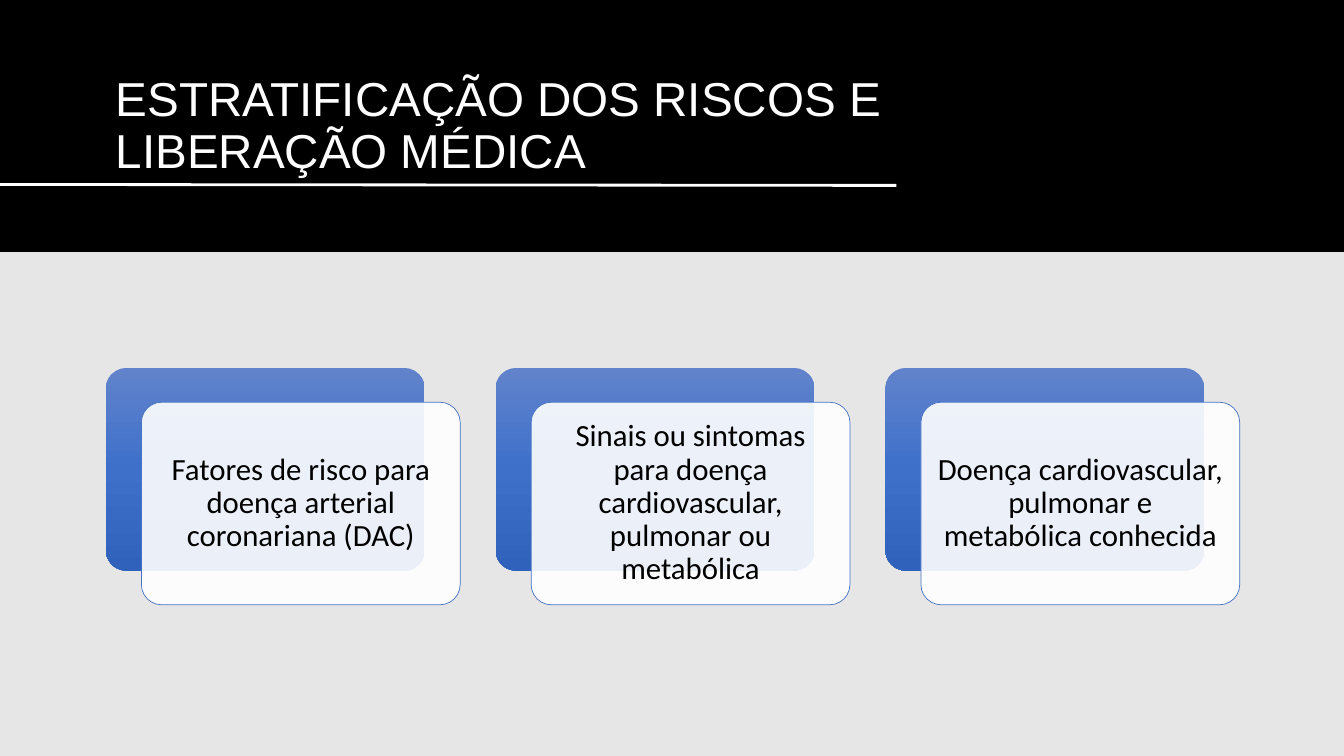
from dataclasses import dataclass

from lxml import etree
from pptx import Presentation
from pptx import util as u
from pptx.dml import color
from pptx.enum import shapes, text
from pptx.oxml import ns

SLIDE_WIDTH = u.Inches(13.33)
SLIDE_HEIGHT = u.Inches(7.5)
COLORS = {
    "background": "E7E6E6",
    "header": "000000",
    "white": "FFFFFF",
    "black": "000000",
    "outline": "4472C4",
    "gradient_top": "6183CB",
    "gradient_middle": "3E70CA",
    "gradient_bottom": "3062BB",
}
GRADIENT = [(0, "gradient_top"), (50, "gradient_middle"), (100, "gradient_bottom")]
CARD_OPACITY = 90
CARD_LEFT, CARD_TOP = 7.88, 48.67
CARD_PITCH = 29
CARD_WIDTH, CARD_HEIGHT = 23.72, 26.8
FRONT_SHIFT_X, FRONT_SHIFT_Y = 2.64, 4.53


@dataclass(frozen=True)
class Box:
    left: float
    top: float
    width: float
    height: float

    def shifted(self, across: float, down: float) -> "Box":
        return Box(self.left + across, self.top + down, self.width, self.height)

    def lengths(self) -> tuple:
        return across(self.left), down(self.top), across(self.width), down(self.height)


@dataclass(frozen=True)
class Card:
    column: int
    label: str

    def back_box(self) -> Box:
        left = CARD_LEFT + self.column * CARD_PITCH
        return Box(left, CARD_TOP, CARD_WIDTH, CARD_HEIGHT)


TITLE = "ESTRATIFICAÇÃO DOS RISCOS E LIBERAÇÃO MÉDICA"
CARDS = [
    Card(0, "Fatores de risco para doença arterial coronariana (DAC)"),
    Card(1, "Sinais ou sintomas para doença cardiovascular, pulmonar ou metabólica"),
    Card(2, "Doença cardiovascular, pulmonar e metabólica conhecida"),
]


def across(percent: float) -> int:
    return round(SLIDE_WIDTH * percent / 100)


def down(percent: float) -> int:
    return round(SLIDE_HEIGHT * percent / 100)


def rgb(name: str) -> color.RGBColor:
    return color.RGBColor.from_string(COLORS[name])


def add_block(parent, kind, box: Box):
    shape = parent.add_shape(kind, *box.lengths())
    shape.shadow.inherit = False
    shape.line.fill.background()
    return shape


def add_rounded(parent, box: Box):
    shape = add_block(parent, shapes.MSO_SHAPE.ROUNDED_RECTANGLE, box)
    shape.adjustments[0] = 0.1
    return shape


def write(shape, words: str, font: str, size: float, ink: str, anchor, alignment) -> None:
    frame = shape.text_frame
    frame.word_wrap = True
    frame.vertical_anchor = anchor
    frame.text = words
    paragraph = frame.paragraphs[0]
    paragraph.alignment = alignment
    paragraph.line_spacing = 0.9
    for run in paragraph.runs:
        run.font.name = font
        run.font.size = u.Pt(size)
        run.font.color.rgb = rgb(ink)


def fill_gradient(shape) -> None:
    shape.fill.gradient()
    shape.fill.gradient_angle = 270
    stops = shape.element.spPr.find(".//" + ns.qn("a:gsLst"))
    for stop in list(stops):
        stops.remove(stop)
    for position, name in GRADIENT:
        stop = etree.SubElement(stops, ns.qn("a:gs"), pos=str(position * 1000))
        etree.SubElement(stop, ns.qn("a:srgbClr"), val=COLORS[name])


def set_opacity(shape, percent: int) -> None:
    fill_color = shape.element.spPr.find(ns.qn("a:solidFill"))[0]
    etree.SubElement(fill_color, ns.qn("a:alpha"), val=str(percent * 1000))


def add_header(slide) -> None:
    band = add_block(slide.shapes, shapes.MSO_SHAPE.RECTANGLE, Box(0, 0, 100, 33.33))
    band.fill.solid()
    band.fill.fore_color.rgb = rgb("header")

    title = slide.shapes.add_textbox(*Box(7.88, 6.27, 58.81, 18).lengths())
    write(title, TITLE, "Arial", 34, "white",
          text.MSO_ANCHOR.BOTTOM, text.PP_ALIGN.LEFT)

    rule = slide.shapes.add_connector(
        shapes.MSO_CONNECTOR.STRAIGHT, 0, down(24.4), across(66.69), down(24.53))
    rule.line.color.rgb = rgb("white")
    rule.line.width = u.Pt(2)
    etree.SubElement(rule.element.spPr, ns.qn("a:effectLst"))


def add_card(parent, card: Card) -> None:
    back_box = card.back_box()
    fill_gradient(add_rounded(parent, back_box))

    front = add_rounded(parent, back_box.shifted(FRONT_SHIFT_X, FRONT_SHIFT_Y))
    front.fill.solid()
    front.fill.fore_color.rgb = rgb("white")
    set_opacity(front, CARD_OPACITY)
    front.line.color.rgb = rgb("outline")
    front.line.width = u.Pt(0.5)
    frame = front.text_frame
    frame.margin_left = frame.margin_right = u.Inches(0.09)
    frame.margin_top = frame.margin_bottom = u.Inches(0.09)
    write(front, card.label, "Calibri", 22, "black",
          text.MSO_ANCHOR.MIDDLE, text.PP_ALIGN.CENTER)


def main() -> None:
    presentation = Presentation()
    presentation.slide_width = SLIDE_WIDTH
    presentation.slide_height = SLIDE_HEIGHT
    slide = presentation.slides.add_slide(presentation.slide_layouts[6])
    slide.background.fill.solid()
    slide.background.fill.fore_color.rgb = rgb("background")

    add_header(slide)
    card_group = slide.shapes.add_group_shape()
    for card in CARDS:
        add_card(card_group.shapes, card)
    presentation.save("out.pptx")


if __name__ == "__main__":
    main()
